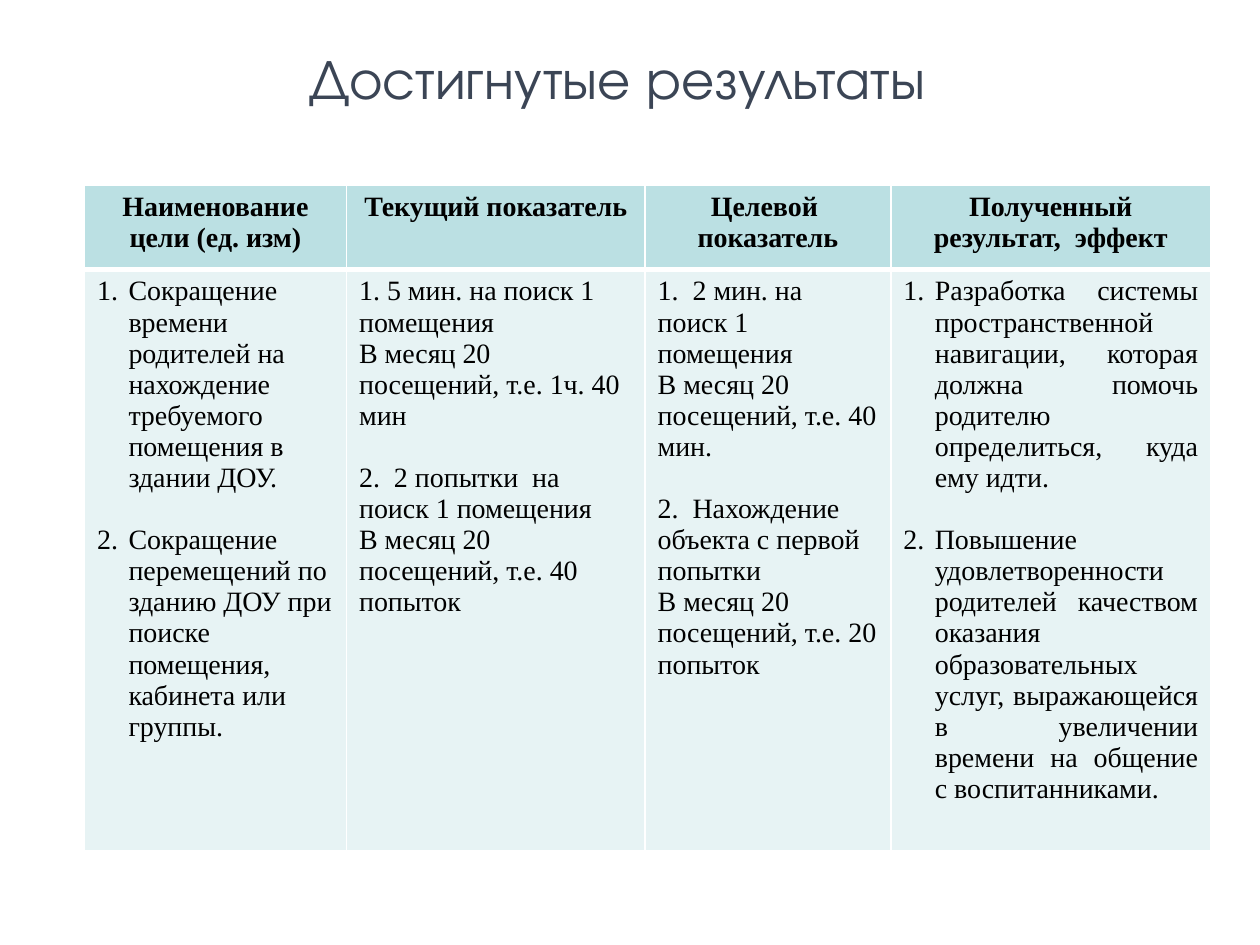
from lxml import etree
from pptx import Presentation
from pptx.dml.color import RGBColor
from pptx.enum.text import MSO_ANCHOR, PP_ALIGN
from pptx.oxml.ns import qn
from pptx.util import Inches, Pt

CENTER, LEFT, JUSTIFY = PP_ALIGN.CENTER, PP_ALIGN.LEFT, PP_ALIGN.JUSTIFY
MIDDLE = MSO_ANCHOR.MIDDLE

THEME = {
    "title": {"name": "TeX Gyre Adventor", "size": Pt(32), "bold": False, "color": "3B4555"},
    "header": {"name": "Times New Roman", "size": Pt(16), "bold": True, "color": "000000"},
    "body": {"name": "Times New Roman", "size": Pt(16), "bold": False, "color": "000000"},
    "header_fill": "BBE0E3",
    "body_fill": "E7F3F4",
    "border": "FFFFFF",
    "thin": Pt(1),
    "thick": Pt(3),
    "item_gap": Pt(17.7),
}

# Each column: width, header lines, two items of one or more lines, numbered, alignment
COLUMNS = [
    (2.08, ["Наименование цели (ед. изм)"],
     [["Сокращение времени родителей на нахождение требуемого помещения в здании ДОУ."],
      ["Сокращение перемещений по зданию ДОУ при поиске помещения, кабинета или группы."]],
     True, LEFT),
    (2.37, ["Текущий показатель"],
     [["1. 5 мин. на поиск 1 помещения", "В месяц 20 посещений, т.е. 1ч. 40 мин"],
      ["2.  2 попытки  на поиск 1 помещения", "В месяц 20 посещений, т.е. 40 попыток"]],
     False, LEFT),
    (1.95, ["Целевой ", "показатель"],
     [["1.  2 мин. на поиск 1 помещения", "В месяц 20 посещений, т.е. 40 мин."],
      ["2.  Нахождение объекта с первой попытки", "В месяц 20 посещений, т.е. 20 попыток"]],
     False, LEFT),
    (2.54, ["Полученный результат,  эффект"],
     [["Разработка системы пространственной навигации, которая должна помочь родителю "
       "определиться, куда ему идти."],
      ["Повышение удовлетворенности родителей качеством оказания образовательных услуг, "
       "выражающейся в увеличении времени на общение с воспитанниками."]],
     True, JUSTIFY),
]
ROW_HEIGHTS = [0.67, 4.43]


def write_items(text_frame, items, style, alignment, numbered=False):
    """Write each item's lines as paragraphs, with a gap between items."""
    lines = [(line, index > 0 and position == 0)
             for index, item in enumerate(items) for position, line in enumerate(item)]
    for number, (line, gap_before) in enumerate(lines):
        paragraph = text_frame.paragraphs[0] if number == 0 else text_frame.add_paragraph()
        paragraph.alignment = alignment
        if gap_before:
            paragraph.space_before = THEME["item_gap"]
        if numbered:
            properties = paragraph._p.get_or_add_pPr()
            properties.set("marL", str(Inches(0.25)))
            properties.set("indent", str(-Inches(0.25)))
            etree.SubElement(properties, qn("a:buAutoNum"), type="arabicPeriod")
        run = paragraph.add_run()
        run.text = line
        for attribute in ("name", "size", "bold"):
            setattr(run.font, attribute, style[attribute])
        run.font.color.rgb = RGBColor.from_string(style["color"])


def paint_cell(cell, fill, top, bottom):
    properties = cell._tc.get_or_add_tcPr()
    widths = {"lnL": THEME["thin"], "lnR": THEME["thin"], "lnT": top, "lnB": bottom}
    for side, width in widths.items():
        line = etree.SubElement(properties, qn(f"a:{side}"), w=str(width))
        solid = etree.SubElement(line, qn("a:solidFill"))
        etree.SubElement(solid, qn("a:srgbClr"), val=THEME["border"])
    cell.fill.solid()
    cell.fill.fore_color.rgb = RGBColor.from_string(fill)


presentation = Presentation()
presentation.slide_width, presentation.slide_height = Inches(10), Inches(7.5)
slide = presentation.slides.add_slide(presentation.slide_layouts[6])

title = slide.shapes.add_textbox(Inches(2.25), Inches(0.29), Inches(5.3), Inches(0.64))
title.text_frame.word_wrap = False
title.text_frame.vertical_anchor = MIDDLE
write_items(title.text_frame, [["Достигнутые результаты"]], THEME["title"], CENTER)

table = slide.shapes.add_table(
    len(ROW_HEIGHTS), len(COLUMNS), Inches(0.67), Inches(1.47),
    Inches(sum(column[0] for column in COLUMNS)), Inches(sum(ROW_HEIGHTS))).table
for row, height in zip(table.rows, ROW_HEIGHTS):
    row.height = Inches(height)

for index, (width, heading, items, numbered, alignment) in enumerate(COLUMNS):
    table.columns[index].width = Inches(width)
    header, body = table.cell(0, index), table.cell(1, index)
    paint_cell(header, THEME["header_fill"], THEME["thin"], THEME["thick"])
    paint_cell(body, THEME["body_fill"], THEME["thick"], THEME["thin"])
    write_items(header.text_frame, [heading], THEME["header"], CENTER)
    write_items(body.text_frame, items, THEME["body"], alignment, numbered)

presentation.save("out.pptx")
